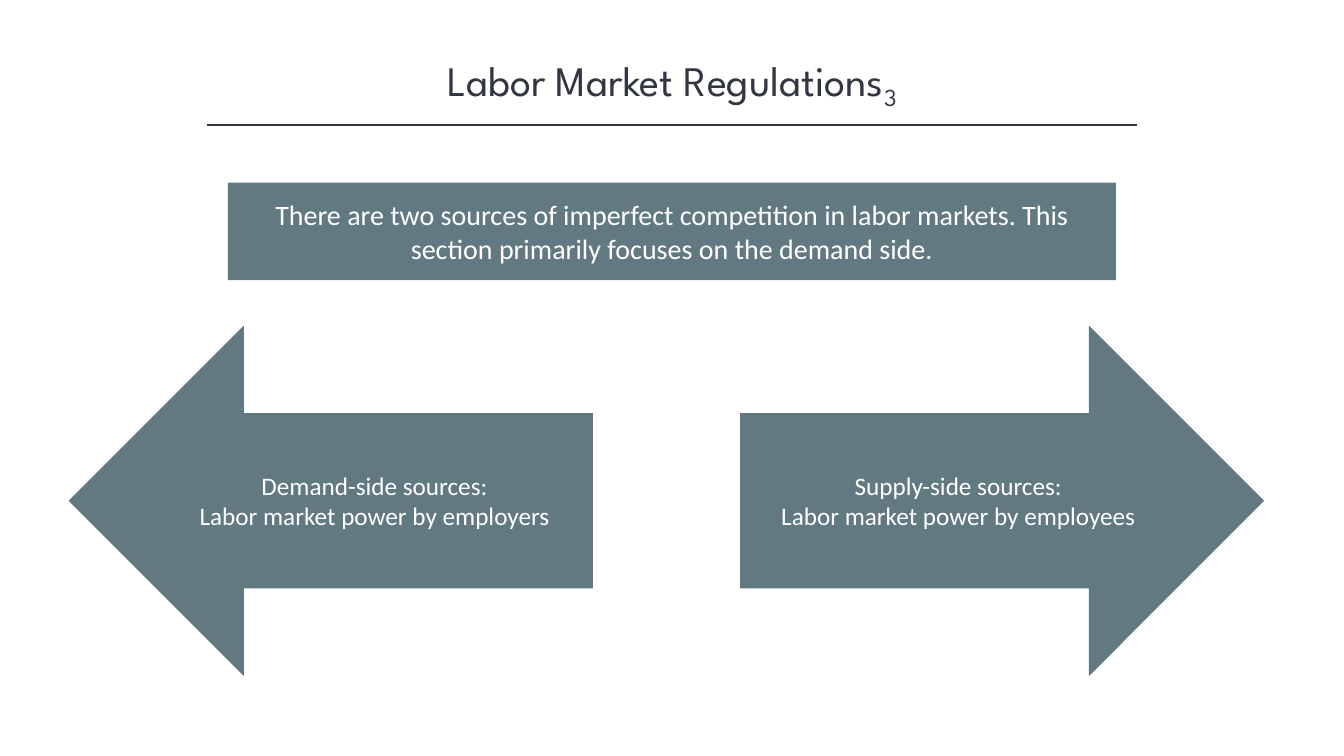
from lxml import etree
from pptx import Presentation
from pptx.dml.color import RGBColor
from pptx.enum import shapes, text
from pptx.oxml import ns
from pptx.util import Cm, Pt

TITLE = "Labor Market Regulations"
TITLE_INDEX = "3"
BANNER = ("There are two sources of imperfect competition in labor markets. "
          "This section primarily focuses on the demand side.")
ARROWS = [
    (shapes.MSO_SHAPE.LEFT_ARROW,
     ["Demand-side sources:", "Labor market power by employers"]),
    (shapes.MSO_SHAPE.RIGHT_ARROW,
     ["Supply-side sources:", "Labor market power by employees"]),
]
INK, SLATE, WHITE = "323542", "627981", "FFFFFF"
SLIDE_WIDTH, SLIDE_HEIGHT = 33.87, 19.05
TITLE_WIDTH, RULE_WIDTH, BANNER_WIDTH = 25.4, 23.42, 22.38
RULE_TOP = 3.15
ARROW_LEFT, ARROW_TOP, ARROW_WIDTH, ARROW_HEIGHT = 1.73, 8.2, 13.21, 8.84
ARROW_STEP = 16.92


def color(value):
    return RGBColor.from_string(value)


def centered(width):
    return (SLIDE_WIDTH - width) / 2


def write(shape, lines, size, font="Calibri", ink=WHITE, margin=0.25):
    frame = shape.text_frame
    frame.word_wrap = True
    frame.vertical_anchor = text.MSO_ANCHOR.MIDDLE
    frame.margin_left = frame.margin_right = Cm(margin)
    frame.text = "\n".join(lines)
    for paragraph in frame.paragraphs:
        paragraph.alignment = text.PP_ALIGN.CENTER
        for run in paragraph.runs:
            style(run, size, font, ink)
    return frame


def style(run, size, font, ink):
    run.font.size = Pt(size)
    run.font.name = font
    run.font.color.rgb = color(ink)


def add_block(slide, kind, left, top, width, height):
    shape = slide.shapes.add_shape(kind, Cm(left), Cm(top), Cm(width), Cm(height))
    shape.shadow.inherit = False
    shape.fill.solid()
    shape.fill.fore_color.rgb = color(SLATE)
    shape.line.fill.background()
    return shape


def add_title(slide):
    box = slide.shapes.add_textbox(
        Cm(centered(TITLE_WIDTH)), Cm(1.32), Cm(TITLE_WIDTH), Cm(1.55))
    frame = write(box, [TITLE], 30, "League Spartan", INK)
    index = frame.paragraphs[0].add_run()
    index.text = TITLE_INDEX
    style(index, 30, "League Spartan", INK)
    index.font._element.set("baseline", "-25000")


def add_rule(slide):
    left = centered(RULE_WIDTH)
    rule = slide.shapes.add_connector(
        shapes.MSO_CONNECTOR.STRAIGHT,
        Cm(left), Cm(RULE_TOP), Cm(left + RULE_WIDTH), Cm(RULE_TOP))
    rule.line.color.rgb = color(INK)
    rule.line.width = Pt(1)
    etree.SubElement(rule._element.spPr, ns.qn("a:effectLst"))


def main():
    presentation = Presentation()
    presentation.slide_width = Cm(SLIDE_WIDTH)
    presentation.slide_height = Cm(SLIDE_HEIGHT)
    slide = presentation.slides.add_slide(presentation.slide_layouts[6])
    add_title(slide)
    add_rule(slide)
    banner = add_block(slide, shapes.MSO_SHAPE.RECTANGLE,
                       centered(BANNER_WIDTH), 4.6, BANNER_WIDTH, 2.46)
    write(banner, [BANNER], 20, margin=0.6)
    for number, (kind, lines) in enumerate(ARROWS):
        arrow = add_block(slide, kind, ARROW_LEFT + number * ARROW_STEP,
                          ARROW_TOP, ARROW_WIDTH, ARROW_HEIGHT)
        write(arrow, lines, 18)
    presentation.save("out.pptx")


if __name__ == "__main__":
    main()
